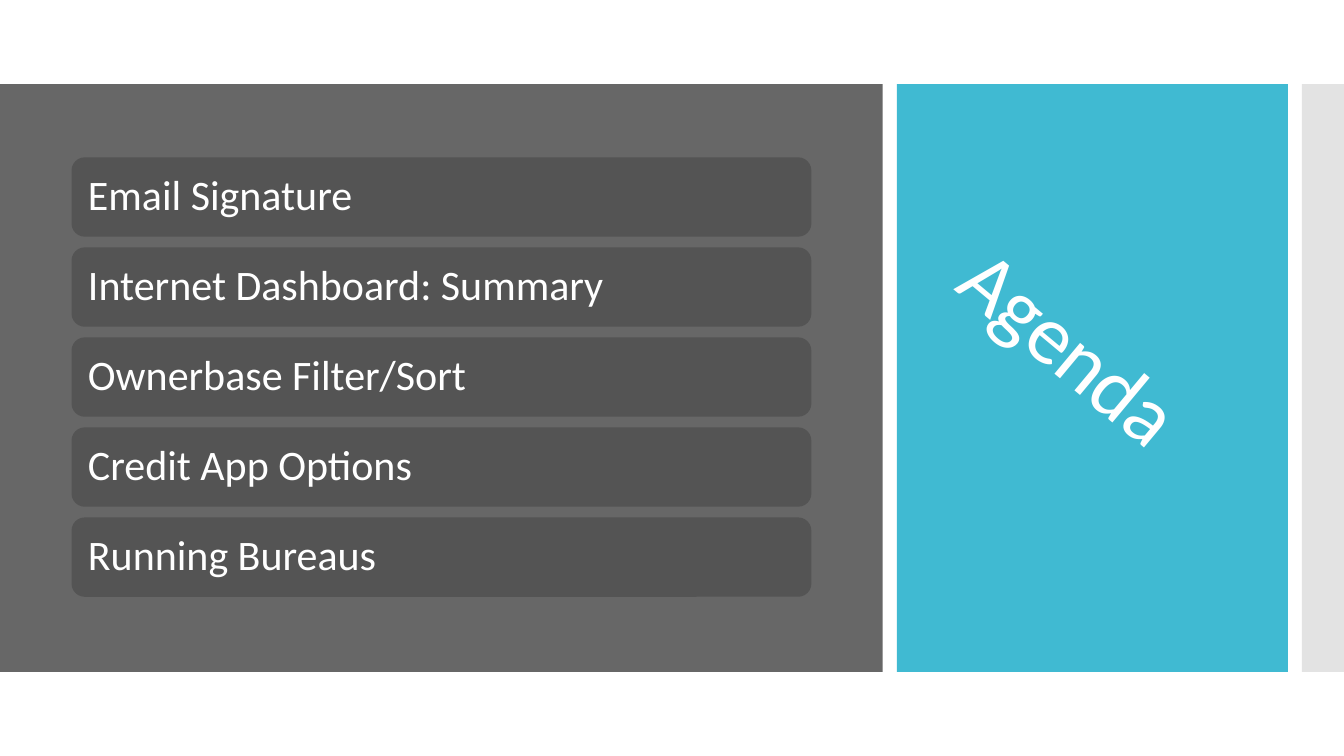
"""Build the agenda slide with a list of topics beside a tilted title."""
import dataclasses

import pptx
import pptx.dml.color
import pptx.enum.shapes
import pptx.enum.text
import pptx.slide
import pptx.text.text
import pptx.util

Pt = pptx.util.Pt
SHAPE = pptx.enum.shapes.MSO_SHAPE
FONT = "Calibri"
BAND_TOP, BAND_HEIGHT = 60, 420
TOPIC_TOP, TOPIC_PITCH = 112.4, 64.3
TOPICS = [
    "Email Signature",
    "Internet Dashboard: Summary",
    "Ownerbase Filter/Sort",
    "Credit App Options",
    "Running Bureaus",
]


@dataclasses.dataclass
class Box:
    """Hold the place and fill of one shape, in points."""
    left: float
    top: float
    width: float
    height: float
    fill: str
    kind: SHAPE = SHAPE.RECTANGLE


BANDS = [
    Box(0, BAND_TOP, 630.5, BAND_HEIGHT, "676767"),
    Box(640.7, BAND_TOP, 279.3, BAND_HEIGHT, "40BAD2"),
    Box(930, BAND_TOP, 30, BAND_HEIGHT, "E3E3E3"),
]


def rgb(value: str) -> pptx.dml.color.RGBColor:
    """Turn a hex string into a colour."""
    return pptx.dml.color.RGBColor.from_string(value)


def add_box(s: pptx.slide.Slide, box: Box):
    """Draw a filled shape without outline or shadow."""
    sp = s.shapes.add_shape(
        box.kind, Pt(box.left), Pt(box.top), Pt(box.width), Pt(box.height))
    sp.shadow.inherit = False
    sp.fill.solid()
    sp.fill.fore_color.rgb = rgb(box.fill)
    sp.line.fill.background()
    return sp


def add_text(sp, text: str, size: float, inset: float) -> pptx.text.text._Run:
    """Write one white, left-aligned, vertically centred line."""
    tf = sp.text_frame
    tf.word_wrap = True
    tf.vertical_anchor = pptx.enum.text.MSO_ANCHOR.MIDDLE
    tf.margin_left = tf.margin_right = Pt(inset)
    tf.margin_top = tf.margin_bottom = Pt(3.6)
    p = tf.paragraphs[0]
    p.alignment = pptx.enum.text.PP_ALIGN.LEFT
    p.line_spacing = 0.9
    r = p.add_run()
    r.text = text
    r.font.name = FONT
    r.font.size = Pt(size)
    r.font.color.rgb = rgb("FFFFFF")
    return r


def main() -> None:
    """Build and save the slide."""
    prs = pptx.Presentation()
    prs.slide_width, prs.slide_height = Pt(960), Pt(540)
    s = prs.slides.add_slide(prs.slide_layouts[6])
    s.background.fill.solid()
    s.background.fill.fore_color.rgb = rgb("FFFFFF")

    for band in BANDS:
        add_box(s, band)

    title = s.shapes.add_textbox(Pt(661), Pt(228.2), Pt(231.8), Pt(66.2))
    title.rotation = 39.8
    r = add_text(title, "Agenda", 60, 7.2)
    r._r.get_or_add_rPr().set("spc", "-60")

    for i, topic in enumerate(TOPICS):
        sp = add_box(s, Box(51.1, TOPIC_TOP + i * TOPIC_PITCH, 528.5, 56.7,
                            "545454", SHAPE.ROUNDED_RECTANGLE))
        add_text(sp, topic, 30, 9)

    prs.save("out.pptx")


if __name__ == "__main__":
    main()
